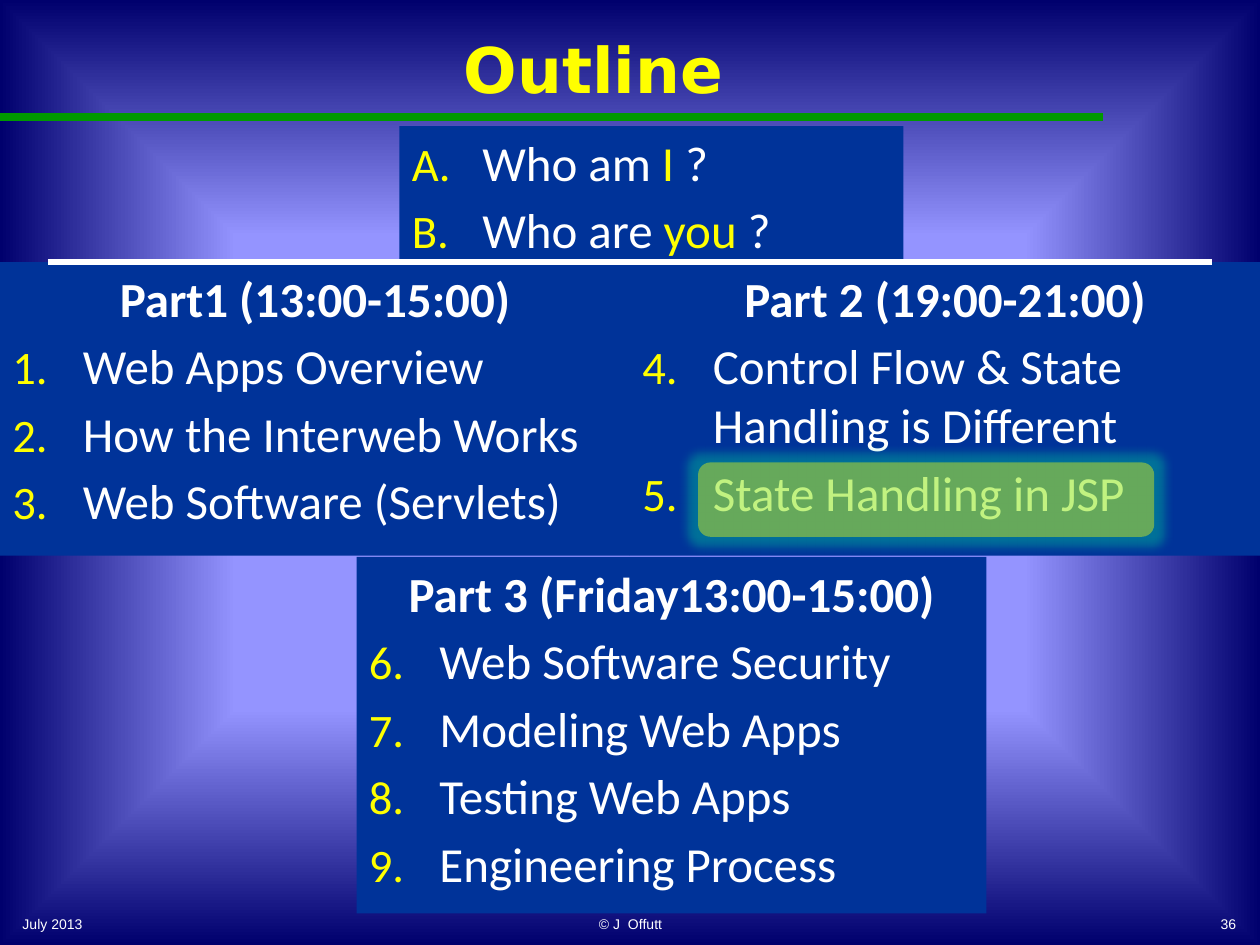
import dataclasses
import typing

import lxml.etree
import pptx
import pptx.dml.color
import pptx.enum.shapes
import pptx.enum.text
import pptx.oxml
import pptx.oxml.ns
import pptx.util

Inches = pptx.util.Inches
Pt = pptx.util.Pt
ALIGN = pptx.enum.text.PP_ALIGN
SHAPE = pptx.enum.shapes.MSO_SHAPE
qn = pptx.oxml.ns.qn
NS = pptx.oxml.ns.nsdecls("a")

COLORS = {
    "glow_center": "9494FF",
    "night": "00006D",
    "panel": "003399",
    "yellow": "FFFF00",
    "white": "FFFFFF",
    "rule": "009900",
    "halo": "00CC99",
}


class Run(typing.NamedTuple):
    text: str
    color: str = "white"


@dataclasses.dataclass
class Panel:
    left: float
    top: float
    width: float
    height: float
    items: list[list[Run]]
    heading: str = ""
    numbering: str = "arabicPeriod"
    start: int = 1


@dataclasses.dataclass
class Label:
    left: float
    top: float
    width: float
    height: float
    text: str
    align: ALIGN
    size: int = 8
    font: str = "Arial"
    color: str = "white"
    bold: bool = False


@dataclasses.dataclass
class Rule:
    x1: float
    x2: float
    y: float
    color: str
    weight: float


def rgb(name: str) -> pptx.dml.color.RGBColor:
    return pptx.dml.color.RGBColor.from_string(COLORS[name])


def add_run(p, text: str, font: str, size: int, color: str, bold: bool = False) -> None:
    r = p.add_run()
    r.text = text
    r.font.name = font
    r.font.size = Pt(size)
    r.font.bold = bold
    r.font.color.rgb = rgb(color)


def paint_background(s) -> None:
    s.background.fill.gradient()
    old = s.element.find(".//" + qn("a:gradFill"))
    new = pptx.oxml.parse_xml(
        f'<a:gradFill {NS} rotWithShape="0"><a:gsLst>'
        f'<a:gs pos="50000"><a:srgbClr val="{COLORS["glow_center"]}"/></a:gs>'
        f'<a:gs pos="100000"><a:srgbClr val="{COLORS["night"]}"/></a:gs></a:gsLst>'
        '<a:path path="shape"><a:fillToRect l="50000" t="50000" r="50000" b="50000"/>'
        "</a:path></a:gradFill>"
    )
    old.getparent().replace(old, new)


def add_box(s, shape: SHAPE, box: tuple[float, ...], color: str):
    sp = s.shapes.add_shape(shape, *map(Inches, box))
    sp.shadow.inherit = False
    sp.fill.solid()
    sp.fill.fore_color.rgb = rgb(color)
    sp.line.fill.background()
    return sp


def number_paragraph(p, panel: Panel) -> None:
    pPr = p._p.get_or_add_pPr()
    pPr.set("marL", str(Inches(0.56)))
    pPr.set("indent", str(Inches(-0.56)))
    color = lxml.etree.SubElement(pPr, qn("a:buClr"))
    lxml.etree.SubElement(color, qn("a:srgbClr"), val=COLORS["yellow"])
    lxml.etree.SubElement(pPr, qn("a:buSzPct"), val="95000")
    lxml.etree.SubElement(pPr, qn("a:buFont"), typeface="Calibri")
    lxml.etree.SubElement(
        pPr, qn("a:buAutoNum"), type=panel.numbering, startAt=str(panel.start)
    )


def add_panel(s, panel: Panel) -> None:
    box = (panel.left, panel.top, panel.width, panel.height)
    tf = add_box(s, SHAPE.RECTANGLE, box, "panel").text_frame
    tf.word_wrap = True
    tf.vertical_anchor = pptx.enum.text.MSO_ANCHOR.TOP
    headings = [[Run(panel.heading)]] if panel.heading else []
    for i, runs in enumerate(headings + panel.items):
        p = tf.add_paragraph() if i else tf.paragraphs[0]
        is_heading = i < len(headings)
        p.alignment = ALIGN.CENTER if is_heading else ALIGN.LEFT
        if not is_heading:
            number_paragraph(p, panel)
        if i:
            p.space_before = Pt(5)
        for run in runs:
            add_run(p, run.text, "Calibri", 28, run.color, is_heading)


def add_label(s, label: Label) -> None:
    box = (label.left, label.top, label.width, label.height)
    tf = s.shapes.add_textbox(*map(Inches, box)).text_frame
    tf.word_wrap = True
    tf.vertical_anchor = pptx.enum.text.MSO_ANCHOR.MIDDLE
    p = tf.paragraphs[0]
    p.alignment = label.align
    add_run(p, label.text, label.font, label.size, label.color, label.bold)


def add_rule(s, rule: Rule) -> None:
    line = s.shapes.add_connector(
        pptx.enum.shapes.MSO_CONNECTOR.STRAIGHT,
        Inches(rule.x1), Inches(rule.y), Inches(rule.x2), Inches(rule.y),
    )
    line.line.color.rgb = rgb(rule.color)
    line.line.width = Pt(rule.weight)
    lxml.etree.SubElement(line._element.spPr, qn("a:effectLst"))


def add_highlight(s, box: tuple[float, ...]) -> None:
    sp = add_box(s, SHAPE.ROUNDED_RECTANGLE, box, "yellow")
    spPr = sp._element.spPr
    fill = spPr.find(qn("a:solidFill")).find(qn("a:srgbClr"))
    lxml.etree.SubElement(fill, qn("a:alpha"), val="40000")
    glow = lxml.etree.SubElement(
        spPr.find(qn("a:effectLst")), qn("a:glow"), rad=str(Pt(11))
    )
    halo = lxml.etree.SubElement(glow, qn("a:srgbClr"), val=COLORS["halo"])
    lxml.etree.SubElement(halo, qn("a:alpha"), val="40000")


def plain(*texts: str) -> list[list[Run]]:
    return [[Run(text)] for text in texts]


INTRO = Panel(3.17, 1, 4, 1.08, [
    [Run("Who am "), Run("I", "yellow"), Run(" ?")],
    [Run("Who are "), Run("you", "yellow"), Run(" ?")],
], numbering="alphaUcPeriod")
PARTS = [
    Panel(0, 2.08, 5, 2.33, plain(
        "Web Apps Overview", "How the Interweb Works", "Web Software (Servlets)",
    ), "Part1 (13:00-15:00)"),
    Panel(5, 2.08, 5, 2.33, plain(
        "Control Flow & State Handling is Different", "State Handling in JSP",
    ), "Part 2 (19:00-21:00)", start=4),
    Panel(2.83, 4.42, 5, 2.83, plain(
        "Web Software Security", "Modeling Web Apps", "Testing Web Apps",
        "Engineering Process",
    ), "Part 3 (Friday13:00-15:00)", start=6),
]
LABELS = [
    Label(0.17, 0.08, 9.08, 0.92, "Outline", ALIGN.CENTER, 36, "DejaVu Sans", "yellow", True),
    Label(0.08, 7.17, 2.08, 0.33, "July 2013", ALIGN.LEFT),
    Label(3.42, 7.17, 3.17, 0.33, "© J  Offutt", ALIGN.CENTER),
    Label(7.83, 7.17, 2.08, 0.33, "36", ALIGN.RIGHT),
]


def main() -> None:
    """Build the course outline slide."""
    prs = pptx.Presentation()
    prs.slide_width, prs.slide_height = Inches(10), Inches(7.5)
    s = prs.slides.add_slide(prs.slide_layouts[6])
    paint_background(s)
    add_rule(s, Rule(0, 8.75, 0.93, "rule", 4.5))
    add_panel(s, INTRO)
    for label in LABELS:
        add_label(s, label)
    for panel in PARTS:
        add_panel(s, panel)
    add_rule(s, Rule(0.38, 9.62, 2.08, "white", 3))
    add_highlight(s, (5.54, 3.67, 3.62, 0.59))
    prs.save("out.pptx")


if __name__ == "__main__":
    main()
